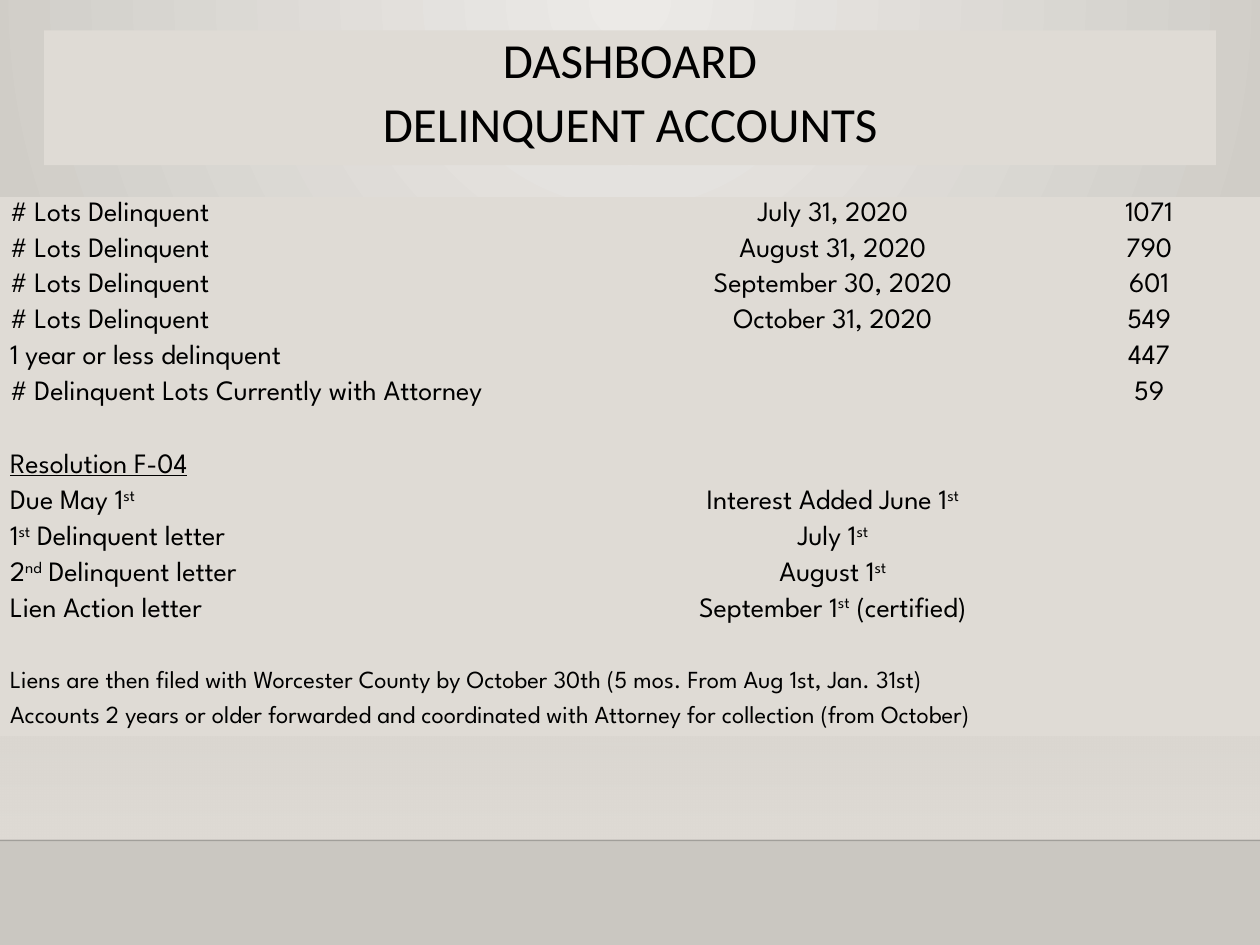
from lxml.etree import SubElement
from pptx import Presentation
from pptx.dml.color import RGBColor
from pptx.enum.shapes import MSO_CONNECTOR as Connector, MSO_SHAPE as Shape
from pptx.enum.text import MSO_ANCHOR as Anchor, PP_ALIGN as Align
from pptx.oxml import parse_xml
from pptx.oxml.ns import nsdecls, qn
from pptx.util import Inches, Pt

TITLE = ["DASHBOARD", "DELINQUENT ACCOUNTS"]
# Text between carets is superscript.
ROWS = [
    ("# Lots Delinquent", "July 31, 2020", "1071"),
    ("# Lots Delinquent", "August 31, 2020", "790"),
    ("# Lots Delinquent", "September 30, 2020", "601"),
    ("# Lots Delinquent", "October 31, 2020", "549"),
    ("1 year or less delinquent", "", "447"),
    ("# Delinquent Lots Currently with Attorney", "", "59"),
    ("", "", ""),
    ("Resolution F-04", "", ""),
    ("Due May 1^st^", "Interest Added June 1^st^", ""),
    ("1^st^ Delinquent letter", "July 1^st^", ""),
    ("2^nd^ Delinquent letter", "August 1^st^", ""),
    ("Lien Action letter", "September 1^st^ (certified)", ""),
    ("", "", ""),
    ("Liens are then filed with Worcester County by October 30th "
     "(5 mos. From Aug 1st, Jan. 31st)", "", ""),
    ("Accounts 2 years or older forwarded and coordinated with Attorney "
     "for collection (from October)", "", ""),
]
GAP_ROW, HEADING_ROW, FIRST_NOTE_ROW = 6, 7, 13
LAST_MERGED_COLUMN = {12: 1, 13: 2, 14: 1}
COLUMN_WIDTHS = [4.98, 3.26, 1.76]
TABLE_TOP, TABLE_HEIGHT, GAP_HEIGHT = 1.56, 4.28, 0.3

BLACK = RGBColor(0, 0, 0)
LINE = RGBColor(0, 0, 1)
SAND = RGBColor(0xDF, 0xDB, 0xD5)
LIGHT = RGBColor(0xEC, 0xEA, 0xE7)
SHADE = RGBColor(0xCA, 0xC7, 0xC1)


def write(para, text, size, font, align=Align.LEFT, underline=False):
    """Fill a paragraph, raising the parts of the text between carets."""
    para.alignment = align
    for index, part in enumerate(text.split("^")):
        if not part:
            continue
        span = para.add_run()
        span.text = part
        span.font.size, span.font.name = Pt(size), font
        span.font.color.rgb = BLACK
        if underline:
            span.font.underline = True
        if index % 2:
            span.font._element.set("baseline", "30000")
    if not text:
        end = SubElement(para._p, qn("a:endParaRPr"), sz=str(size * 100))
        SubElement(end, qn("a:latin"), typeface=font)


def set_alpha(color_element, percent):
    SubElement(color_element, qn("a:alpha"), val=str(percent * 1000))


def set_gradient(fill, start, end):
    fill.gradient()
    for stop, color in zip(fill.gradient_stops, (start, end)):
        stop.color.rgb = color


def paint_background(slide):
    set_gradient(slide.background.fill, LIGHT, SHADE)
    linear = next(slide.element.iter(qn("a:lin")))
    linear.getparent().replace(linear, parse_xml(
        f'<a:path {nsdecls("a")} path="circle">'
        '<a:fillToRect l="43000" t="0" r="43000" b="100000"/></a:path>'))


def add_floor(slide):
    floor = slide.shapes.add_shape(
        Shape.RECTANGLE, 0, Inches(2.2), Inches(10), Inches(4.46))
    floor.shadow.inherit = False
    floor.line.fill.background()
    set_gradient(floor.fill, SAND, SAND)
    floor.fill.gradient_angle = 270
    set_alpha(next(floor.element.iter(qn("a:srgbClr"))), 0)

    edge = slide.shapes.add_connector(
        Connector.STRAIGHT, 0, Inches(6.67), Inches(10), Inches(6.67))
    edge.line.color.rgb, edge.line.width = LINE, Pt(1)
    set_alpha(next(edge.element.iter(qn("a:srgbClr"))), 20)
    SubElement(edge.element.spPr, qn("a:effectLst"))


def add_accounts_table(slide):
    frame = slide.shapes.add_table(
        len(ROWS), len(COLUMN_WIDTHS), 0, Inches(TABLE_TOP),
        Inches(sum(COLUMN_WIDTHS)), Inches(TABLE_HEIGHT))
    table = frame.table
    table.first_row = table.horz_banding = False
    # The built-in style with no fill and no grid
    style = next(frame._element.iter(qn("a:tableStyleId")))
    style.text = "{2D5ABB26-0587-4C30-8999-92F81FD0307C}"
    for column, width in zip(table.columns, COLUMN_WIDTHS):
        column.width = Inches(width)
    row_height = (TABLE_HEIGHT - GAP_HEIGHT) / (len(ROWS) - 1)
    for r, texts in enumerate(ROWS):
        table.rows[r].height = Inches(GAP_HEIGHT if r == GAP_ROW else row_height)
        for c, text in enumerate(texts):
            cell = table.cell(r, c)
            cell.fill.solid()
            cell.fill.fore_color.rgb = SAND
            cell.margin_left = cell.margin_right = Inches(0.08)
            cell.margin_top = cell.margin_bottom = Inches(0.04)
            cell.vertical_anchor = Anchor.MIDDLE if r else Anchor.BOTTOM
            write(cell.text_frame.paragraphs[0], text,
                  size=14 if r >= FIRST_NOTE_ROW else 16, font="League Spartan",
                  align=Align.CENTER if c else Align.LEFT,
                  underline=r == HEADING_ROW)
    for r, last in LAST_MERGED_COLUMN.items():
        table.cell(r, 0).merge(table.cell(r, last))


def add_title(slide):
    title = slide.shapes.title
    title.left, title.top = Inches(0.35), Inches(0.24)
    title.width, title.height = Inches(9.3), Inches(1.07)
    title.fill.solid()
    title.fill.fore_color.rgb = SAND
    frame = title.text_frame
    frame.word_wrap, frame.vertical_anchor = True, Anchor.TOP
    for index, text in enumerate(TITLE):
        para = frame.add_paragraph() if index else frame.paragraphs[0]
        para.line_spacing, para.space_after = 0.9, Pt(6)
        para.space_before = Pt(0)
        write(para, text, size=28, font="Calibri", align=Align.CENTER)


def main():
    deck = Presentation()
    deck.slide_width, deck.slide_height = Inches(10), Inches(7.5)
    slide = deck.slides.add_slide(deck.slide_layouts.get_by_name("Title Only"))
    paint_background(slide)
    add_floor(slide)
    add_accounts_table(slide)
    add_title(slide)
    deck.save("out.pptx")


if __name__ == "__main__":
    main()
